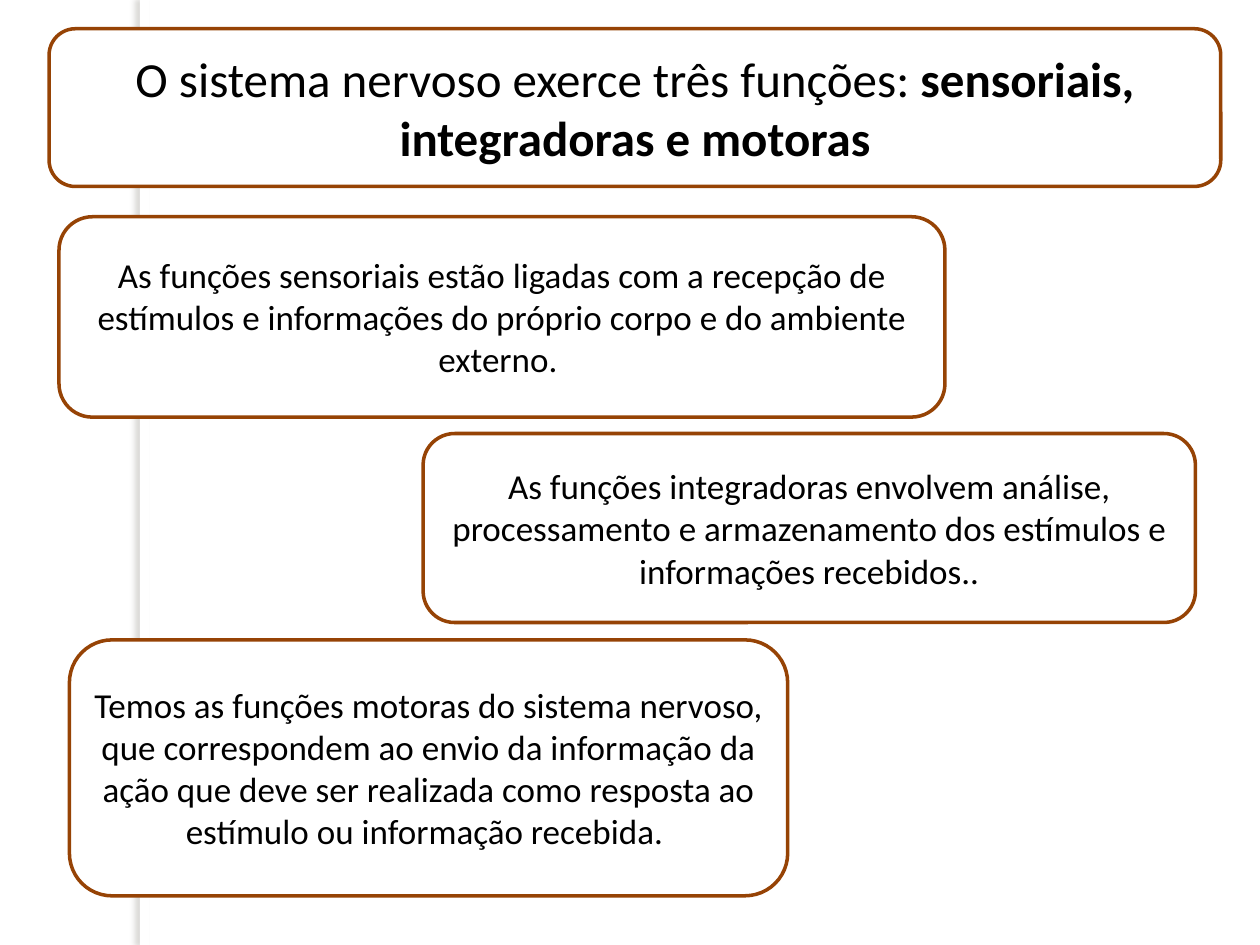
import dataclasses

import lxml.etree
import pptx
import pptx.dml.color
import pptx.enum.shapes
import pptx.enum.text
import pptx.oxml.ns
import pptx.util

Cm = pptx.util.Cm
Kind = pptx.enum.shapes.MSO_SHAPE


@dataclasses.dataclass
class Card:
    left: float
    top: float
    width: float
    height: float
    text: str
    strong: str = ""
    size: int = 20


CARDS = [
    Card(0.99, 0.58, 23.62, 3.18, "O sistema nervoso exerce três funções: ",
         "sensoriais, integradoras e motoras", 28),
    Card(1.19, 4.37, 17.86, 4.04,
         "As funções sensoriais estão ligadas com a recepção de estímulos e "
         "informações do próprio corpo e do ambiente externo. "),
    Card(8.53, 8.74, 15.57, 3.81,
         "As funções integradoras envolvem análise, processamento e "
         "armazenamento dos estímulos e informações recebidos.."),
    Card(1.4, 12.9, 14.48, 5.16,
         "Temos as funções motoras do sistema nervoso, que correspondem ao "
         "envio da informação da ação que deve ser realizada como resposta ao "
         "estímulo ou informação recebida. "),
]


def paint(target, code: str) -> None:
    target.rgb = pptx.dml.color.RGBColor.from_string(code)


def add_box(slide, kind, left: float, top: float, width: float, height: float):
    box = slide.shapes.add_shape(kind, Cm(left), Cm(top), Cm(width), Cm(height))
    box.shadow.inherit = False
    box.fill.solid()
    paint(box.fill.fore_color, "FFFFFF")
    return box


def add_text(para, text: str, *, size: int, bold: bool = False,
             color: str = "000000", face: str = "Calibri") -> None:
    run = para.add_run()
    run.text = text
    run.font.name = face
    run.font.size = pptx.util.Pt(size)
    run.font.bold = bold
    paint(run.font.color, color)


def add_band(slide) -> None:
    band = add_box(slide, Kind.RECTANGLE, 2.82, 0, 0.2, 19.05)
    band.line.fill.background()
    qn = pptx.oxml.ns.qn
    effects = band._element.spPr.find(qn("a:effectLst"))
    shade = lxml.etree.SubElement(
        effects, qn("a:outerShdw"), blurRad=str(pptx.util.Pt(3)),
        dist=str(pptx.util.Pt(3)), dir=str(180 * 60000), rotWithShape="0")
    tint = lxml.etree.SubElement(shade, qn("a:srgbClr"), val="736F63")
    lxml.etree.SubElement(tint, qn("a:alpha"), val="25000")


def add_card(slide, card: Card) -> None:
    box = add_box(slide, Kind.ROUNDED_RECTANGLE,
                  card.left, card.top, card.width, card.height)
    paint(box.line.color, "964305")
    box.line.width = pptx.util.Pt(2)
    frame = box.text_frame
    frame.word_wrap = True
    frame.vertical_anchor = pptx.enum.text.MSO_ANCHOR.MIDDLE
    para = frame.paragraphs[0]
    para.alignment = pptx.enum.text.PP_ALIGN.CENTER
    add_text(para, card.text, size=card.size)
    if card.strong:
        add_text(para, card.strong, size=card.size, bold=True)


def main() -> None:
    """Build the slide on the functions of the nervous system."""
    deck = pptx.Presentation()
    deck.slide_width, deck.slide_height = Cm(25.4), Cm(19.05)
    slide = deck.slides.add_slide(deck.slide_layouts[6])
    add_band(slide)
    for card in CARDS:
        add_card(slide, card)
    deck.save("out.pptx")


if __name__ == "__main__":
    main()
